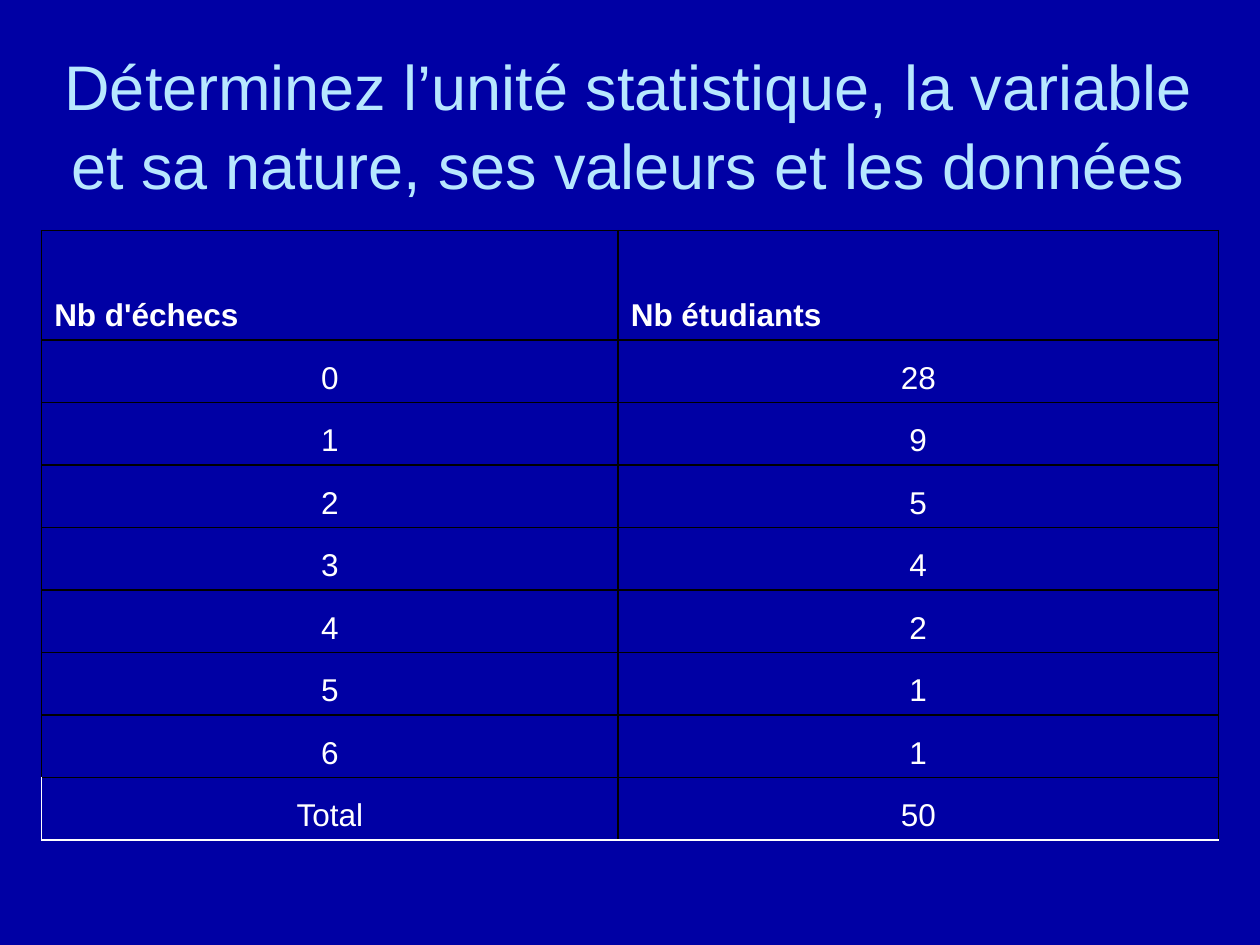
from pptx import Presentation
from pptx import util as u
from pptx.dml import color
from pptx.enum import text
from pptx.oxml import xmlchemy, ns
from lxml import etree

COLORS = {"background": "0000A4", "title": "B7E7FF", "body": "FFFFFF", "rule": "000000"}
HEADINGS = ("Nb d'échecs", "Nb étudiants")
COUNTS = (28, 9, 5, 4, 2, 1, 1)
HEADER_HEIGHT, ROW_HEIGHT = 2.2, 1.26
FIRST_COLUMN_SHARE = 0.49


def rgb(name):
    return color.RGBColor.from_string(COLORS[name])


def format_paragraph(paragraph, color_name, alignment, **values):
    paragraph.alignment = alignment
    for attribute, value in {"name": "Arial", **values}.items():
        setattr(paragraph.font, attribute, value)
    paragraph.font.color.rgb = rgb(color_name)


def draw_borders(cell, sides):
    properties = cell._tc.get_or_add_tcPr()
    for position, side in enumerate(sides):
        line = etree.Element(ns.qn(f"a:ln{side}"), w=str(u.Pt(1)))
        fill = etree.SubElement(line, ns.qn("a:solidFill"))
        etree.SubElement(fill, ns.qn("a:srgbClr"), val=COLORS["rule"])
        properties.insert(position, line)


def place_title(slide, left, top, width, height):
    title = slide.shapes.title
    box = {"left": left, "top": top, "width": width, "height": height}
    for attribute, value in box.items():
        setattr(title, attribute, u.Cm(value))
    frame = title.text_frame
    frame.text = "Déterminez l’unité statistique, la variable et sa nature, ses valeurs et les données"
    frame.word_wrap = True
    frame.auto_size = text.MSO_AUTO_SIZE.NONE
    frame.vertical_anchor = text.MSO_ANCHOR.MIDDLE
    frame.paragraphs[0].line_spacing = 1.05
    format_paragraph(frame.paragraphs[0], "title", text.PP_ALIGN.CENTER, size=u.Pt(36))


def place_table(slide, left, top, width):
    rows = [HEADINGS, *enumerate(COUNTS), ("Total", sum(COUNTS))]
    heights = [HEADER_HEIGHT] + [ROW_HEIGHT] * (len(rows) - 1)
    table = slide.shapes.add_table(
        len(rows), 2, u.Cm(left), u.Cm(top), u.Cm(width), u.Cm(sum(heights))
    ).table
    table.first_row = table.horz_banding = False
    shares = (FIRST_COLUMN_SHARE, 1 - FIRST_COLUMN_SHARE)
    for column, share in zip(table.columns, shares):
        column.width = u.Cm(width * share)

    for r, (values, height) in enumerate(zip(rows, heights)):
        table.rows[r].height = u.Cm(height)
        is_header, is_total = r == 0, r == len(rows) - 1
        alignment = text.PP_ALIGN.LEFT if is_header else text.PP_ALIGN.CENTER
        for c, value in enumerate(values):
            cell = table.cell(r, c)
            cell.text = str(value)
            cell.fill.background()
            cell.vertical_anchor = text.MSO_ANCHOR.BOTTOM
            format_paragraph(cell.text_frame.paragraphs[0], "body", alignment,
                             size=u.Pt(18), bold=is_header)
            sides = "LRTB"
            if is_total:
                sides = "RT" if c == 0 else "LRT"
            draw_borders(cell, sides)


def main():
    deck = Presentation()
    deck.slide_width, deck.slide_height = u.Cm(25.4), u.Cm(19.05)
    slide = deck.slides.add_slide(deck.slide_layouts[5])
    slide.background.fill.solid()
    slide.background.fill.fore_color.rgb = rgb("background")
    place_title(slide, 0.84, 0.64, 23.65, 3.68)
    place_table(slide, 0.84, 4.65, 23.72)
    deck.save("out.pptx")


if __name__ == "__main__":
    main()
